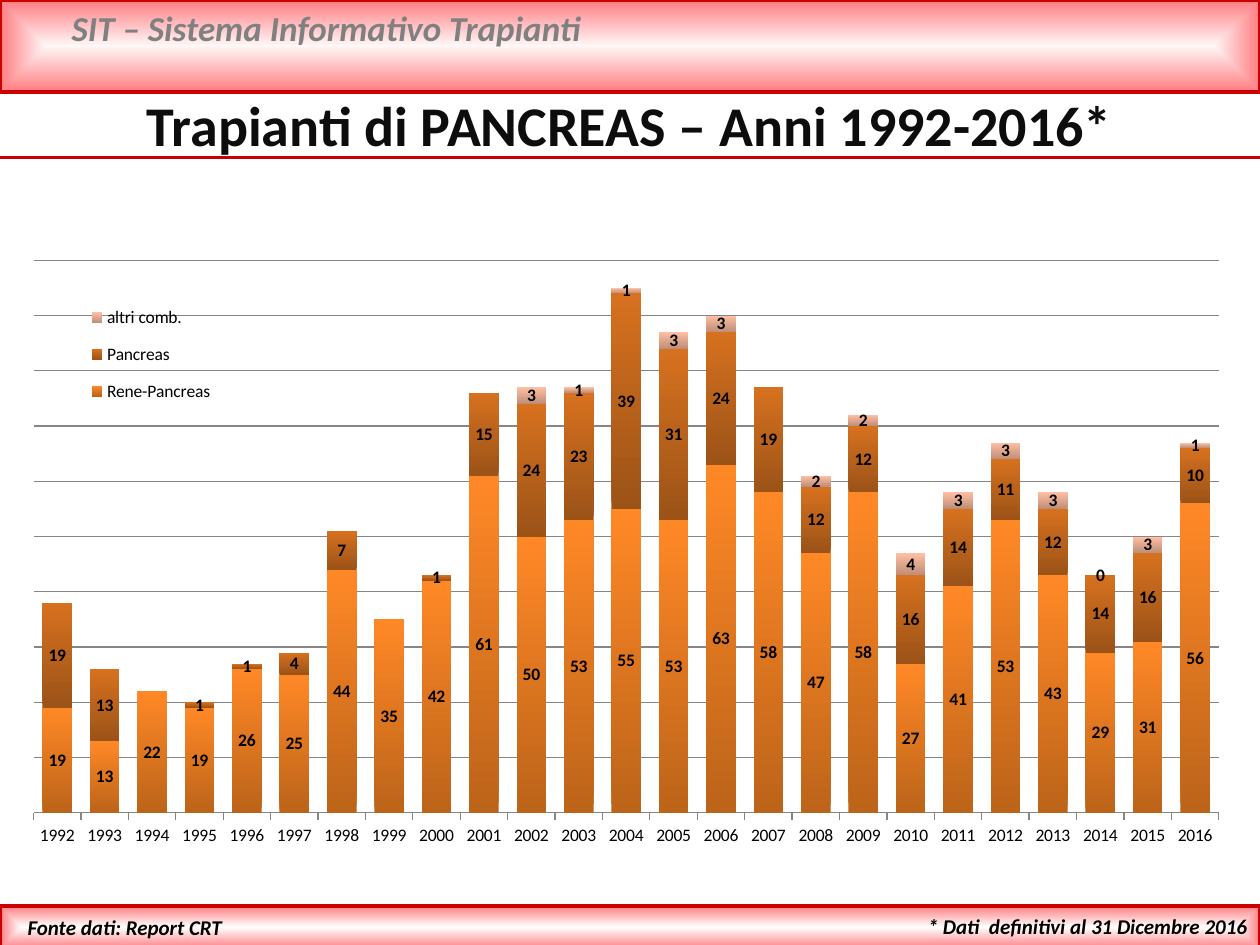
from lxml import etree
from pptx import Presentation
from pptx import util as u
from pptx.chart.data import CategoryChartData
from pptx.dml.color import RGBColor
from pptx.enum import chart as charts, shapes, text
from pptx.oxml import parse_xml
from pptx.oxml.ns import nsdecls, qn

COLORS = {"red": "CC0000", "pink": "FF7C80", "pale": "FFF6F6", "white": "FFFFFF",
          "grey": "808080", "ink": "0D0D0D", "black": "000000", "grid": "868686"}
FONT = "Calibri"
LEFT, CENTER, RIGHT = text.PP_ALIGN.LEFT, text.PP_ALIGN.CENTER, text.PP_ALIGN.RIGHT

# Content
TITLE = "Trapianti di PANCREAS – Anni 1992-2016*"
BANDS = [((0, 0, 10, 0.73), "pale"), ((0, 7.19, 10, 0.34), "white")]
LABELS = [
    ("SIT – Sistema Informativo Trapianti", (0.47, 0, 8.98, 0.44), 20, "grey", LEFT),
    ("* Dati  definitivi al 31 Dicembre 2016", (5.87, 7.2, 4.13, 0.3), 12, "black", RIGHT),
    ("Fonte dati: Report CRT", (0.12, 7.21, 3.21, 0.3), 12, "black", LEFT),
]
YEARS = [str(year) for year in range(1992, 2017)]
# Name, (bottom colour, top colour), values
SERIES = [
    ("Rene-Pancreas", ("BC641A", "FF8826"),
     [19, 13, 22, 19, 26, 25, 44, 35, 42, 61, 50, 53, 55,
      53, 63, 58, 47, 58, 27, 41, 53, 43, 29, 31, 56]),
    ("Pancreas ", ("9C5318", "D6711F"),
     [19, 13, None, 1, 1, 4, 7, None, 1, 15, 24, 23, 39,
      31, 24, 19, 12, 12, 16, 14, 11, 12, 14, 16, 10]),
    ("altri comb.", ("BF8E78", "FFBFA3"),
     [None] * 10 + [3, 1, 1, 3, 3, None, 2, 2, 4, 3, 3, 3, 0, 3, 1]),
]


def rgb(name):
    return RGBColor.from_string(COLORS.get(name, name))


def inches(box):
    return [u.Inches(value) for value in box]


def set_font(font, color="black", **values):
    for name, value in {"name": FONT, **values}.items():
        setattr(font, name, value)
    font.color.rgb = rgb(color)


def set_line(line, color, width):
    line.color.rgb = rgb(color)
    line.width = u.Pt(width)


def set_gradient(fill, colors):
    fill.gradient()
    fill.gradient_angle = 90
    for stop, position, color in zip(fill.gradient_stops, (0, 1), colors):
        stop.position = position
        stop.color.rgb = rgb(color)


def fill_text(shape, content, size, color, align, **values):
    frame = shape.text_frame
    frame.text = content
    frame.word_wrap = True
    frame.vertical_anchor = text.MSO_ANCHOR.TOP
    paragraph = frame.paragraphs[0]
    paragraph.alignment = align
    set_font(paragraph.runs[0].font, color, size=u.Pt(size), bold=True, **values)


def add_band(slide, box, center):
    band = slide.shapes.add_shape(shapes.MSO_SHAPE.RECTANGLE, *inches(box))
    band.shadow.inherit = False
    set_gradient(band.fill, (center, "pink"))
    set_line(band.line, "red", 2)
    # Gradient runs from the centre to the edges
    linear = band._element.spPr.find(qn("a:gradFill")).find(qn("a:lin"))
    linear.getparent().replace(linear, parse_xml(
        f'<a:path {nsdecls("a")} path="shape">'
        '<a:fillToRect l="50000" t="50000" r="50000" b="50000"/></a:path>'))


def make_layout(x, y, w, h, inner=False):
    target = '<c:layoutTarget val="inner"/>' if inner else ""
    modes = "".join(f'<c:{axis}Mode val="edge"/>' for axis in "xy")
    sizes = "".join(f'<c:{key} val="{value}"/>' for key, value in zip("xywh", (x, y, w, h)))
    return parse_xml(f'<c:layout {nsdecls("c")}><c:manualLayout>{target}{modes}{sizes}'
                     '</c:manualLayout></c:layout>')


def add_chart(slide):
    data = CategoryChartData()
    data.categories = YEARS
    for name, _, values in SERIES:
        data.add_series(name, values)
    chart = slide.shapes.add_chart(charts.XL_CHART_TYPE.COLUMN_STACKED,
                                   *inches((0.07, 1.97, 9.8, 4.82)), data).chart
    set_font(chart.font, size=u.Pt(10))
    chart.has_title = False

    # Axes
    value_axis, category_axis = chart.value_axis, chart.category_axis
    for name, value in {"minimum_scale": 0, "maximum_scale": 100, "major_unit": 10,
                        "has_major_gridlines": True, "visible": False}.items():
        setattr(value_axis, name, value)
    category_axis.major_tick_mark = charts.XL_TICK_MARK.OUTSIDE
    for line in (value_axis.major_gridlines.format.line, category_axis.format.line):
        set_line(line, "grid", 0.75)

    # Columns and their labels
    plot = chart.plots[0]
    plot.gap_width, plot.overlap, plot.vary_by_categories = 60, 100, False
    for series, (_, colors, _) in zip(plot.series, SERIES):
        set_gradient(series.format.fill, colors)
        series.data_labels.show_value = True
        set_font(series.data_labels.font, size=u.Pt(10), bold=True)

    # Legend over the plot
    chart.has_legend = True
    legend = chart.legend
    legend.position = charts.XL_LEGEND_POSITION.LEFT
    legend.include_in_layout = False
    set_font(legend.font, size=u.Pt(10))
    place_part(legend._element, make_layout(0.05, 0.07, 0.13, 0.21), qn("c:legendPos"))
    place_part(chart._chartSpace.chart.plotArea, make_layout(0.02, 0.02, 0.96, 0.91, inner=True))


def place_part(parent, layout, after=None):
    for old in parent.findall(qn("c:layout")):
        parent.remove(old)
    if after is None:
        parent.insert(0, layout)
    else:
        parent.find(after).addnext(layout)


def main():
    presentation = Presentation()
    presentation.slide_width, presentation.slide_height = inches((10, 7.5))
    slide = presentation.slides.add_slide(presentation.slide_layouts[5])

    # Header and footer bands, rule under the title
    for box, center in BANDS:
        add_band(slide, box, center)
    rule = slide.shapes.add_connector(shapes.MSO_CONNECTOR.STRAIGHT, *inches((0, 1.25, 10, 1.25)))
    set_line(rule.line, "red", 2)
    etree.SubElement(rule._element.spPr, qn("a:effectLst"))
    for content, box, size, color, align in LABELS:
        fill_text(slide.shapes.add_textbox(*inches(box)), content, size, color, align, italic=True)

    # Title
    title = slide.shapes.title
    title.left, title.top, title.width, title.height = inches((0, 0.67, 10, 0.64))
    fill_text(title, TITLE, 32, "ink", CENTER)

    add_chart(slide)
    presentation.save("out.pptx")


if __name__ == "__main__":
    main()
